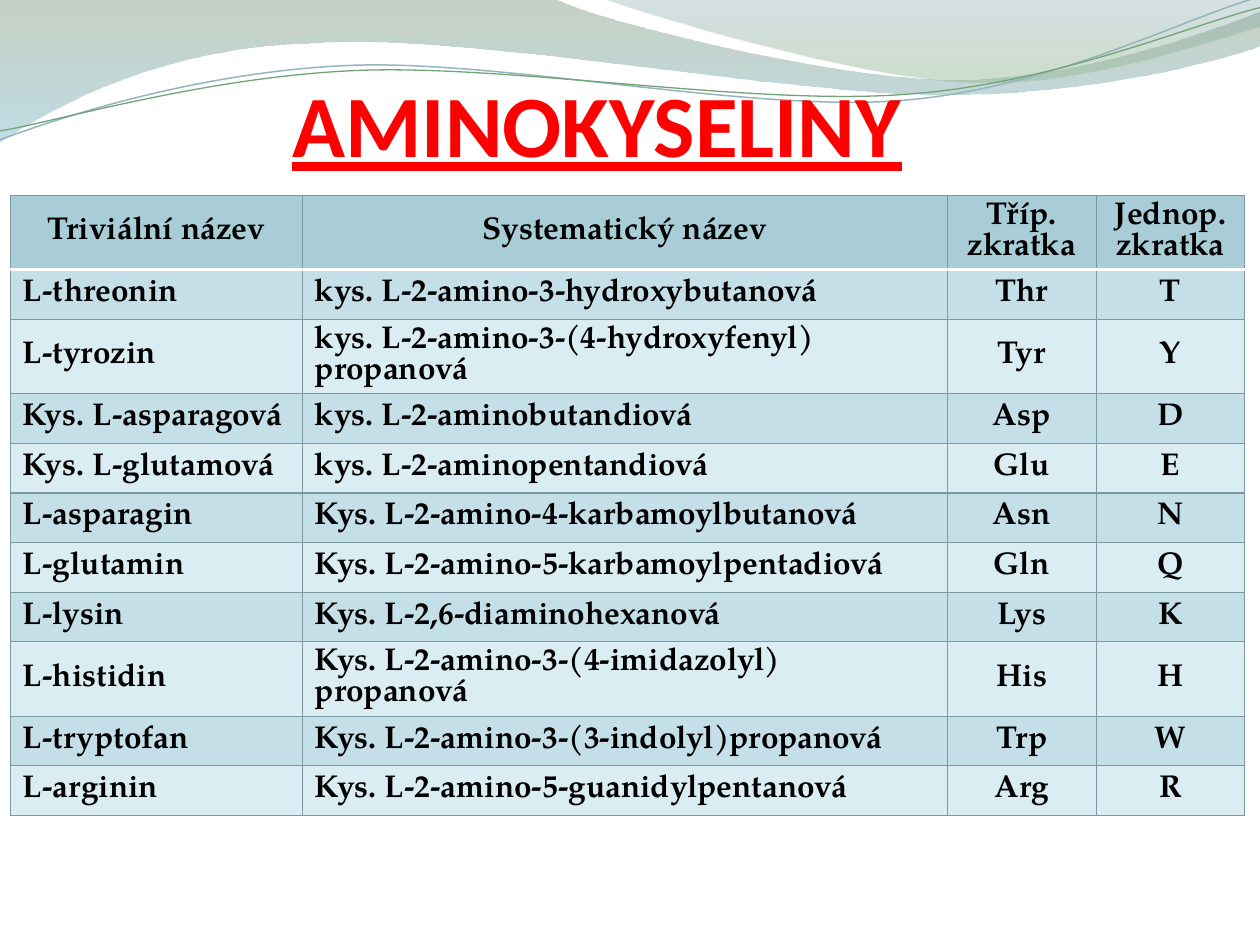
"""Build a slide with a table of amino acids under a wave decoration."""
from dataclasses import dataclass
from typing import Optional

from lxml import etree
from pptx import Presentation
from pptx import util as u
from pptx.dml.color import RGBColor
from pptx.enum import text
from pptx.oxml import ns

TABLE_FONT = "TeX Gyre Pagella"
GRID, WHITE = "7C98A0", "FFFFFF"
HEADER_FILL, BAND_FILL, PLAIN_FILL = "A8CDD7", "C5DFE8", "DAEDF2"
COLUMN_WIDTHS = (2.32, 5.12, 1.18, 1.18)
SINGLE_HEIGHT, DOUBLE_HEIGHT = u.Cm(1), u.Cm(1.5)


@dataclass(frozen=True)
class GradientStop:
    position: float
    color: str
    opacity: int


@dataclass(frozen=True)
class Wave:
    start: tuple
    segments: tuple
    stops: tuple = ()
    line_color: Optional[str] = None
    line_width: float = 0


@dataclass(frozen=True)
class AminoAcid:
    trivial: str
    systematic: str
    three_letter: str
    one_letter: str
    height: int = SINGLE_HEIGHT

    def cells(self) -> tuple:
        return self.trivial, self.systematic, self.three_letter, self.one_letter


WAVES = (
    Wave((0, 0), ((4.4, -0.01), (4.76, 0.17, 6.64, 0.63, 7.58, 0.63),
                  (8.53, 0.63, 9.58, 0.26, 10, 0.09), (10.01, 0.36),
                  (9.83, 0.44, 8.7, 0.76, 7.46, 0.75),
                  (6.22, 0.75, 3.82, 0.28, 2.57, 0.34),
                  (1.29, 0.36, 0.46, 0.83, -0.01, 1.13)),
         (GradientStop(0, "809980", 45), GradientStop(1, "8DC1CF", 55))),
    Wave((4.79, -0.01), ((5.09, 0.11, 6.82, 0.62, 7.69, 0.65),
                         (8.56, 0.69, 9.61, 0.32, 10, 0.21), (10, 0)),
         (GradientStop(0, "779BA4", 30), GradientStop(0.8, "96B996", 45))),
    Wave((0, 1.11), ((0.48, 0.93, 1.58, 0.57, 2.77, 0.52),
                     (3.95, 0.47, 5.93, 0.89, 7.13, 0.8),
                     (8.33, 0.71, 9.38, 0.15, 9.98, -0.02)),
         line_color="94B5BE", line_width=0.85),
    Wave((0, 1.04), ((0.47, 0.96, 1.64, 0.61, 2.83, 0.56),
                     (4.03, 0.51, 5.97, 0.84, 7.17, 0.75),
                     (8.36, 0.67, 9.41, 0.21, 10, 0.06)),
         line_color="72A376", line_width=0.75),
)

ROWS = (
    AminoAcid("Triviální název", "Systematický název", "Tříp.\nzkratka", "Jednop.\nzkratka", DOUBLE_HEIGHT),
    AminoAcid("L-threonin", "kys. L-2-amino-3-hydroxybutanová", "Thr", "T"),
    AminoAcid("L-tyrozin", "kys. L-2-amino-3-(4-hydroxyfenyl) propanová", "Tyr", "Y", DOUBLE_HEIGHT),
    AminoAcid("Kys. L-asparagová", "kys. L-2-aminobutandiová", "Asp", "D"),
    AminoAcid("Kys. L-glutamová", "kys. L-2-aminopentandiová", "Glu", "E"),
    AminoAcid("L-asparagin", "Kys. L-2-amino-4-karbamoylbutanová", "Asn", "N"),
    AminoAcid("L-glutamin", "Kys. L-2-amino-5-karbamoylpentadiová", "Gln", "Q"),
    AminoAcid("L-lysin", "Kys. L-2,6-diaminohexanová", "Lys", "K"),
    AminoAcid("L-histidin", "Kys. L-2-amino-3-(4-imidazolyl) propanová", "His", "H", DOUBLE_HEIGHT),
    AminoAcid("L-tryptofan", "Kys. L-2-amino-3-(3-indolyl)propanová", "Trp", "W"),
    AminoAcid("L-arginin", "Kys. L-2-amino-5-guanidylpentanová", "Arg", "R"),
)


def rgb(color: str) -> RGBColor:
    return RGBColor.from_string(color)


def format_font(font, name: str, size: float, color: str) -> None:
    font.name, font.size, font.bold = name, u.Pt(size), True
    font.color.rgb = rgb(color)


def bend_segments(shape, segments: tuple) -> None:
    for element, segment in zip(list(shape._element.iter(ns.qn("a:lnTo"))), segments):
        if len(segment) == 2:
            continue
        curve = etree.Element(ns.qn("a:cubicBezTo"))
        for x, y in zip(segment[::2], segment[1::2]):
            etree.SubElement(curve, ns.qn("a:pt"), x=str(u.Inches(x) - shape.left),
                             y=str(u.Inches(y) - shape.top))
        element.getparent().replace(element, curve)


def draw_wave(slide, wave: Wave) -> None:
    builder = slide.shapes.build_freeform(*map(u.Inches, wave.start))
    ends = [tuple(map(u.Inches, segment[-2:])) for segment in wave.segments]
    builder.add_line_segments(ends, close=bool(wave.stops))
    shape = builder.convert_to_shape()
    bend_segments(shape, wave.segments)
    shape.shadow.inherit = False
    if not wave.stops:
        shape.fill.background()
        shape.line.color.rgb = rgb(wave.line_color)
        shape.line.width = u.Pt(wave.line_width)
        return
    shape.line.fill.background()
    shape.fill.gradient()
    shape.fill.gradient_angle = 270
    for gradient_stop, stop in zip(shape.fill.gradient_stops, wave.stops):
        gradient_stop.position = stop.position
        gradient_stop.color.rgb = rgb(stop.color)
    for element, stop in zip(shape._element.iter(ns.qn("a:srgbClr")), wave.stops):
        etree.SubElement(element, ns.qn("a:alpha"), val=str(stop.opacity * 1000))


def set_border(cell, side: str, color: str, width: float) -> None:
    line = etree.SubElement(cell._tc.get_or_add_tcPr(), ns.qn(f"a:ln{side}"), w=str(u.Pt(width)))
    fill = etree.SubElement(line, ns.qn("a:solidFill"))
    etree.SubElement(fill, ns.qn("a:srgbClr"), val=color)


def format_cell(cell, content: str, row: int, column: int) -> None:
    white_side = {0: "B", 1: "T"}.get(row)
    for side in "LRTB":
        color, width = (WHITE, 2) if side == white_side else (GRID, 0.75)
        set_border(cell, side, color, width)
    cell.fill.solid()
    cell.fill.fore_color.rgb = rgb(HEADER_FILL if row == 0 else BAND_FILL if row % 2 else PLAIN_FILL)
    cell.vertical_anchor = text.MSO_ANCHOR.MIDDLE
    cell.text_frame.text = content
    centered = row == 0 or column > 1
    for paragraph in cell.text_frame.paragraphs:
        paragraph.alignment = text.PP_ALIGN.CENTER if centered else text.PP_ALIGN.LEFT
        format_font(paragraph.runs[0].font, TABLE_FONT, 18, "000000")


def draw_table(slide) -> None:
    height = sum(row.height for row in ROWS)
    table = slide.shapes.add_table(len(ROWS), len(COLUMN_WIDTHS), u.Inches(0.08), u.Inches(1.55),
                                   u.Inches(sum(COLUMN_WIDTHS)), height).table
    table.horz_banding = False
    for column, width in zip(table.columns, COLUMN_WIDTHS):
        column.width = u.Inches(width)
    for row_index, row in enumerate(ROWS):
        table.rows[row_index].height = row.height
        for column_index, content in enumerate(row.cells()):
            format_cell(table.cell(row_index, column_index), content, row_index, column_index)


def place_title(slide) -> None:
    title = slide.shapes.title
    title.left, title.top = u.Inches(2.32), u.Inches(0.44)
    title.width, title.height = u.Inches(5.13), u.Inches(0.95)
    frame = title.text_frame
    frame.text = "AMINOKYSELINY"
    frame.auto_size = text.MSO_AUTO_SIZE.NONE
    frame.vertical_anchor = text.MSO_ANCHOR.BOTTOM
    frame.margin_left = frame.margin_right = frame.margin_bottom = 0
    frame.margin_top = u.Inches(0.05)
    paragraph = frame.paragraphs[0]
    paragraph.alignment = text.PP_ALIGN.LEFT
    font = paragraph.runs[0].font
    format_font(font, "Calibri", 50, "FF0000")
    font.underline = True
    slide.shapes._spTree.append(title._element)


def main() -> None:
    presentation = Presentation()
    presentation.slide_width, presentation.slide_height = u.Inches(10), u.Inches(7.5)
    slide = presentation.slides.add_slide(presentation.slide_layouts[5])
    for wave in WAVES:
        draw_wave(slide, wave)
    draw_table(slide)
    place_title(slide)
    presentation.save("out.pptx")


if __name__ == "__main__":
    main()
